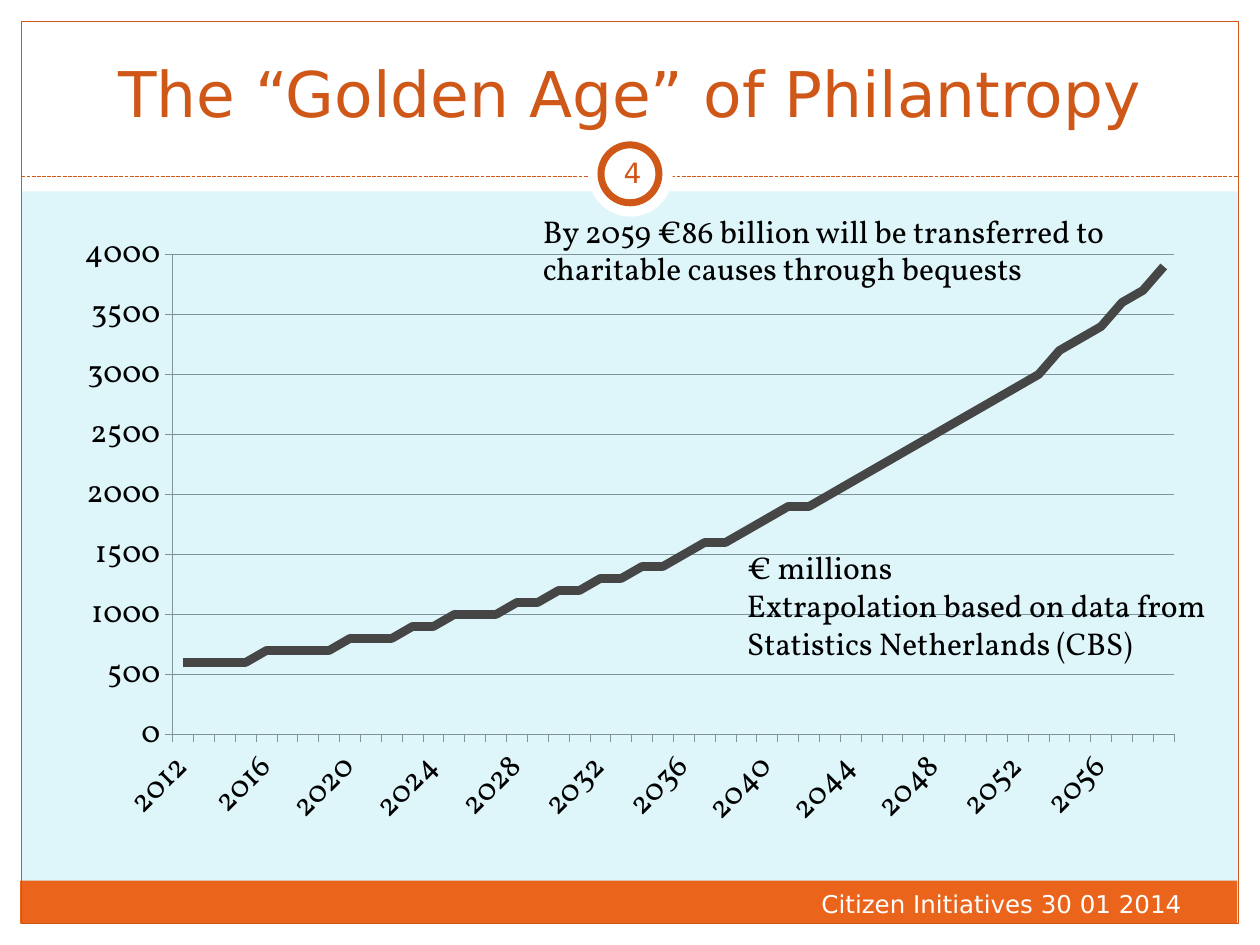
"""Build the slide on the expected growth of bequests to charitable causes."""
from lxml import etree
from pptx import Presentation, util as u
from pptx.chart.data import CategoryChartData
from pptx.dml.color import RGBColor
from pptx.enum import chart as charts, dml, shapes, text
from pptx.oxml import parse_xml
from pptx.oxml.ns import nsdecls, qn

COLORS = {"sky": "DEF5FA", "white": "FFFFFF", "orange": "EB641B", "rust": "CF5818",
          "black": "000000", "curve": "464646", "grid": "7F9499"}
SANS, SERIF = "DejaVu Sans", "Vollkorn"

HEADING = "The “Golden Age” of Philantropy"
FIRST_YEAR = 2012
AMOUNTS = [
    600, 600, 600, 600, 700, 700, 700, 700, 800, 800, 800, 900,
    900, 1000, 1000, 1000, 1100, 1100, 1200, 1200, 1300, 1300, 1400, 1400,
    1500, 1600, 1600, 1700, 1800, 1900, 1900, 2000, 2100, 2200, 2300, 2400,
    2500, 2600, 2700, 2800, 2900, 3000, 3200, 3300, 3400, 3600, 3700, 3900,
]
CHART_BOX = (0.5, 1.75, 9, 4.95)
PLOT_BOX = (1.37, 2.02, 7.95, 3.81)

BANDS = [
    ((0, 7.33, 10, 0.17), "white"),
    ((0, 0, 10, 1.52), "white"),
    ((0, 0, 0.17, 7.5), "white"),
    ((9.83, 0, 0.17, 7.5), "white"),
    ((0.16, 6.99, 9.66, 0.34), "orange"),
]
SOURCE_NOTE = ["€ millions", "Extrapolation based on data from Statistics Netherlands (CBS)"]
FORECAST = ["By 2059 €86 billion will be transferred to charitable causes through bequests"]
PAGE_NUMBER = ["4"]
EVENT = ["Citizen Initiatives 30 01 2014"]


def rgb(name):
    return RGBColor.from_string(COLORS[name])


def inches(box):
    return [u.Inches(length) for length in box]


def style(font, face, size, color):
    font.name, font.size = face, u.Pt(size)
    font.color.rgb = rgb(color)


def add_figure(slide, kind, box, fill=None, line=None, width=0.75):
    figure = slide.shapes.add_shape(kind, *inches(box))
    figure.shadow.inherit = False
    if fill:
        figure.fill.solid()
        figure.fill.fore_color.rgb = rgb(fill)
    else:
        figure.fill.background()
    if line:
        figure.line.color.rgb = rgb(line)
        figure.line.width = u.Pt(width)
    else:
        figure.line.fill.background()


def write(frame, lines, face, size, color, align=text.PP_ALIGN.LEFT):
    frame.word_wrap = True
    frame.text = "\n".join(lines)
    for paragraph in frame.paragraphs:
        paragraph.alignment = align
        for run in paragraph.runs:
            style(run.font, face, size, color)


def add_text(slide, box, *content):
    frame = slide.shapes.add_textbox(*inches(box)).text_frame
    write(frame, *content)
    return frame


def add_frame(slide):
    rectangle, oval = shapes.MSO_SHAPE.RECTANGLE, shapes.MSO_SHAPE.OVAL
    for box, fill in BANDS:
        add_figure(slide, rectangle, box, fill)
    add_figure(slide, rectangle, (0.17, 0.17, 9.66, 7.16), line="rust")
    divider = slide.shapes.add_connector(
        shapes.MSO_CONNECTOR.STRAIGHT, *inches((0.17, 1.4, 9.83, 1.4)))
    divider.line.color.rgb = rgb("rust")
    divider.line.width = u.Pt(0.75)
    divider.line.dash_style = dml.MSO_LINE.SQUARE_DOT
    etree.SubElement(divider._element.spPr, qn("a:effectLst"))
    add_figure(slide, oval, (4.67, 1.05, 0.67, 0.67), "white")
    add_figure(slide, oval, (4.77, 1.15, 0.46, 0.46), "white", "rust", 4)


def place_plot(chart):
    left, top, width, height = CHART_BOX
    plot_left, plot_top, plot_width, plot_height = PLOT_BOX
    parts = [("layoutTarget", "inner"), ("xMode", "edge"), ("yMode", "edge"),
             ("x", (plot_left - left) / width), ("y", (plot_top - top) / height),
             ("w", plot_width / width), ("h", plot_height / height)]
    settings = "".join(f'<c:{tag} val="{value}"/>' for tag, value in parts)
    area = chart._chartSpace.chart.plotArea
    for layout in area.findall(qn("c:layout")):
        area.remove(layout)
    area.insert(0, parse_xml(
        f'<c:layout {nsdecls("c")}><c:manualLayout>{settings}</c:manualLayout></c:layout>'))


def add_bequests(slide):
    data = CategoryChartData(number_format="0")
    data.categories = [str(FIRST_YEAR + n) for n in range(len(AMOUNTS))]
    data.add_series("Series 1", AMOUNTS)
    chart = slide.shapes.add_chart(
        charts.XL_CHART_TYPE.LINE, *inches(CHART_BOX), data).chart
    chart.has_legend = chart.has_title = False
    style(chart.font, SERIF, 18, "black")

    plot = chart.plots[0]
    plot.vary_by_categories = False
    curve = plot.series[0]
    curve.smooth = False
    curve.format.line.color.rgb = rgb("curve")
    curve.format.line.width = u.Pt(5)
    curve.marker.style = charts.XL_MARKER_STYLE.NONE

    years, scale = chart.category_axis, chart.value_axis
    scale.minimum_scale, scale.maximum_scale, scale.major_unit = 0, 4000, 500
    scale.has_major_gridlines = True
    scale.tick_labels.number_format = "0"
    scale.tick_labels.number_format_is_linked = False
    for axis in (years, scale):
        axis.major_tick_mark = charts.XL_TICK_MARK.OUTSIDE
        style(axis.tick_labels.font, SERIF, 18, "black")
    for ruled in (years, scale, scale.major_gridlines):
        ruled.format.line.color.rgb = rgb("grid")
        ruled.format.line.width = u.Pt(0.5)

    axis_xml = years._element
    axis_xml.find(qn("c:txPr")).find(qn("a:bodyPr")).set("rot", "-2700000")
    no_multi = axis_xml.find(qn("c:noMultiLvlLbl"))
    for tag, step in (("tickLblSkip", 4), ("tickMarkSkip", 1)):
        no_multi.addprevious(parse_xml(f'<c:{tag} {nsdecls("c")} val="{step}"/>'))
    place_plot(chart)


def main():
    deck = Presentation()
    deck.slide_width, deck.slide_height = u.Inches(10), u.Inches(7.5)
    slide = deck.slides.add_slide(deck.slide_layouts[5])
    slide.background.fill.solid()
    slide.background.fill.fore_color.rgb = rgb("sky")
    add_frame(slide)

    heading = slide.shapes.title
    heading.left, heading.top, heading.width, heading.height = inches((0.33, 0.25, 9.34, 0.83))
    write(heading.text_frame, [HEADING], SANS, 36, "rust", text.PP_ALIGN.CENTER)
    heading.text_frame.vertical_anchor = text.MSO_ANCHOR.BOTTOM
    slide.shapes._spTree.append(heading._element)

    add_bequests(slide)
    add_text(slide, (5.83, 4.3, 4.17, 1.01), SOURCE_NOTE, SERIF, 18, "black")
    add_text(slide, (4.21, 1.63, 5.28, 0.71), FORECAST, SERIF, 18, "black")

    number = add_text(slide, (4.77, 1.13, 0.5, 0.48), PAGE_NUMBER, SANS, 16, "rust",
                      text.PP_ALIGN.CENTER)
    number.vertical_anchor = text.MSO_ANCHOR.MIDDLE
    number.margin_left = number.margin_right = u.Inches(0.05)
    number.margin_top = number.margin_bottom = u.Inches(0.05)

    event = add_text(slide, (6.33, 7.01, 3.33, 0.4), EVENT, SANS, 14, "white",
                     text.PP_ALIGN.RIGHT)
    event.margin_right = u.Inches(0.28)
    deck.save("out.pptx")


if __name__ == "__main__":
    main()
